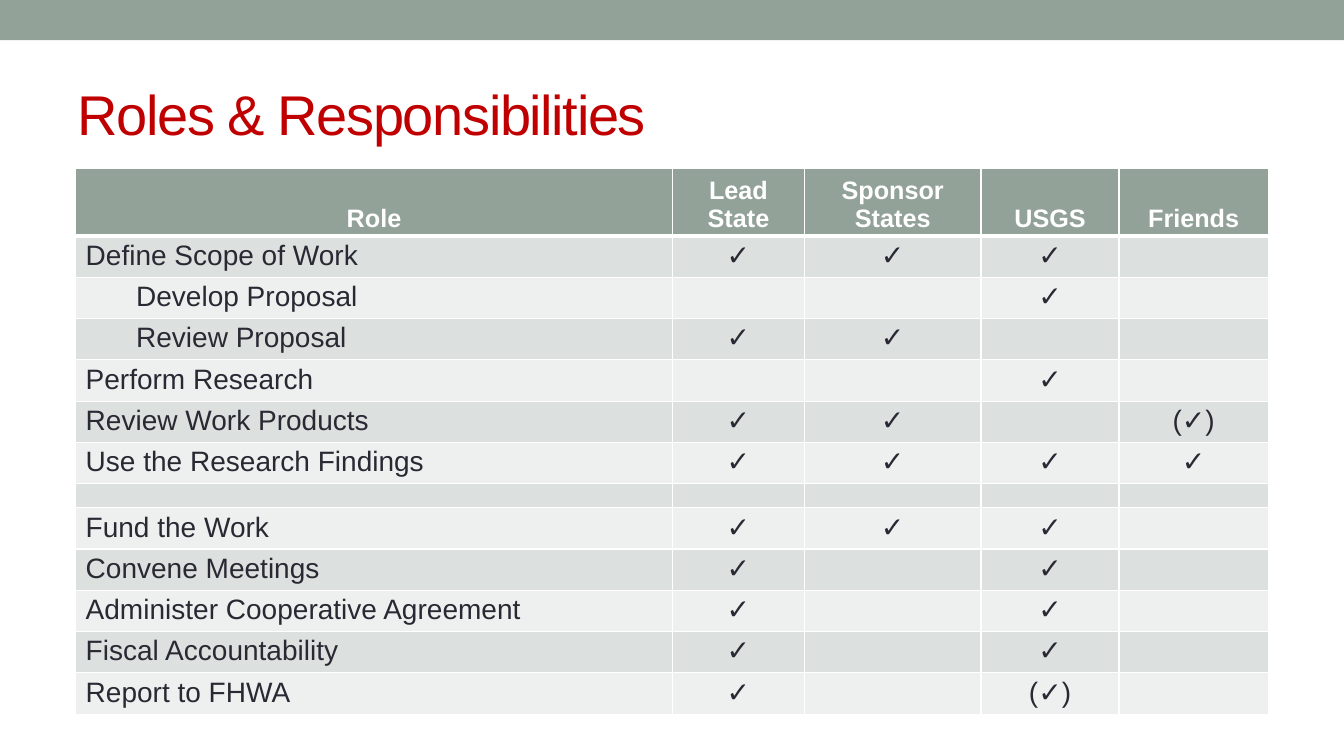
"""Build the Roles & Responsibilities slide with its table of duties."""
from dataclasses import dataclass

from lxml.etree import SubElement
from pptx import Presentation
from pptx.dml.color import RGBColor as Color
from pptx.enum.shapes import MSO_SHAPE as Shape
from pptx.enum.text import MSO_ANCHOR as Anchor, PP_ALIGN as Align
from pptx.oxml.ns import qn
from pptx.util import Inches, Pt


@dataclass(frozen=True)
class Theme:
    font: str = "Arial"
    sage: Color = Color(0x93, 0xA2, 0x99)
    red: Color = Color(0xC0, 0x00, 0x00)
    white: Color = Color(0xFF, 0xFF, 0xFF)
    ink: Color = Color(0x29, 0x29, 0x34)
    bands: tuple = (Color(0xDC, 0xE0, 0xDE), Color(0xEE, 0xF0, 0xEF))
    title_size: int = 40
    header_size: int = 18
    body_size: int = 20
    spacer_size: int = 10


theme = Theme()


def style_text(paragraph, size, color, bold=False):
    for run in paragraph.runs:
        run.font.name = theme.font
        run.font.size = Pt(size)
        run.font.bold = bold
        run.font.color.rgb = color


def add_borders(cell, top, bottom):
    properties = cell._tc.get_or_add_tcPr()
    for side, width in (("L", 1), ("R", 1), ("T", top), ("B", bottom)):
        line = SubElement(properties, qn(f"a:ln{side}"), w=str(Pt(width)))
        fill = SubElement(line, qn("a:solidFill"))
        SubElement(fill, qn("a:srgbClr"), val=str(theme.white))


YES, MAYBE, NO = "✓", "(✓)", ""
HEADERS = ("Role", "Lead State", "Sponsor States", "USGS", "Friends")
DUTIES = (
    ("Define Scope of Work", YES, YES, YES, NO),
    ("Develop Proposal", NO, NO, YES, NO),
    ("Review Proposal", YES, YES, NO, NO),
    ("Perform Research", NO, NO, YES, NO),
    ("Review Work Products", YES, YES, NO, MAYBE),
    ("Use the Research Findings", YES, YES, YES, YES),
    ("", NO, NO, NO, NO),
    ("Fund the Work", YES, YES, YES, NO),
    ("Convene Meetings", YES, NO, YES, NO),
    ("Administer Cooperative Agreement", YES, NO, YES, NO),
    ("Fiscal Accountability", YES, NO, YES, NO),
    ("Report to FHWA", YES, NO, MAYBE, NO),
)
SUBTASKS = ("Develop Proposal", "Review Proposal")
COLUMN_WIDTHS = (5.92, 1.31, 1.75, 1.37, 1.48)
HEADER_HEIGHT, ROW_HEIGHT, SPACER_HEIGHT = 0.65, 0.41, 0.23

presentation = Presentation()
presentation.slide_width = Inches(13.33)
presentation.slide_height = Inches(7.5)
slide = presentation.slides.add_slide(presentation.slide_layouts[6])

top_band = slide.shapes.add_shape(
    Shape.RECTANGLE, 0, 0, presentation.slide_width, Inches(0.4))
top_band.shadow.inherit = False
top_band.fill.solid()
top_band.fill.fore_color.rgb = theme.sage
top_band.line.fill.background()

title = slide.shapes.add_textbox(
    Inches(0.67), Inches(0.58), Inches(12), Inches(1.08))
title_frame = title.text_frame
title_frame.word_wrap = True
title_frame.vertical_anchor = Anchor.MIDDLE
title_frame.text = "Roles & Responsibilities"
title_paragraph = title_frame.paragraphs[0]
style_text(title_paragraph, theme.title_size, theme.red)
title_paragraph.runs[0].font._element.set("spc", "-100")

rows = (HEADERS,) + DUTIES
table = slide.shapes.add_table(
    len(rows), len(HEADERS), Inches(0.75), Inches(1.67),
    Inches(sum(COLUMN_WIDTHS)), Inches(5.4)).table
for column, width in zip(table.columns, COLUMN_WIDTHS):
    column.width = Inches(width)

for row_index, values in enumerate(rows):
    is_header = row_index == 0
    is_spacer = not any(values)
    height = (HEADER_HEIGHT if is_header
              else SPACER_HEIGHT if is_spacer else ROW_HEIGHT)
    table.rows[row_index].height = Inches(height)
    for column_index, value in enumerate(values):
        cell = table.cell(row_index, column_index)
        cell.margin_top = Inches(0.04)
        cell.margin_bottom = Inches(0.03)
        cell.vertical_anchor = Anchor.BOTTOM if is_header else Anchor.TOP
        add_borders(cell, top=3 if row_index == 1 else 1,
                    bottom=3 if is_header else 1)
        cell.fill.solid()
        cell.fill.fore_color.rgb = (
            theme.sage if is_header else theme.bands[(row_index - 1) % 2])
        cell.text_frame.text = value
        paragraph = cell.text_frame.paragraphs[0]
        if is_header or column_index > 0:
            paragraph.alignment = Align.CENTER
        if value in SUBTASKS:
            paragraph.level = 1
            paragraph._p.get_or_add_pPr().set("marL", str(Inches(0.5)))
        if is_header:
            style_text(paragraph, theme.header_size, theme.white, bold=True)
        else:
            style_text(paragraph, theme.body_size, theme.ink)
        if is_spacer:
            SubElement(paragraph._p, qn("a:endParaRPr"),
                       sz=str(theme.spacer_size * 100))

presentation.save("out.pptx")
